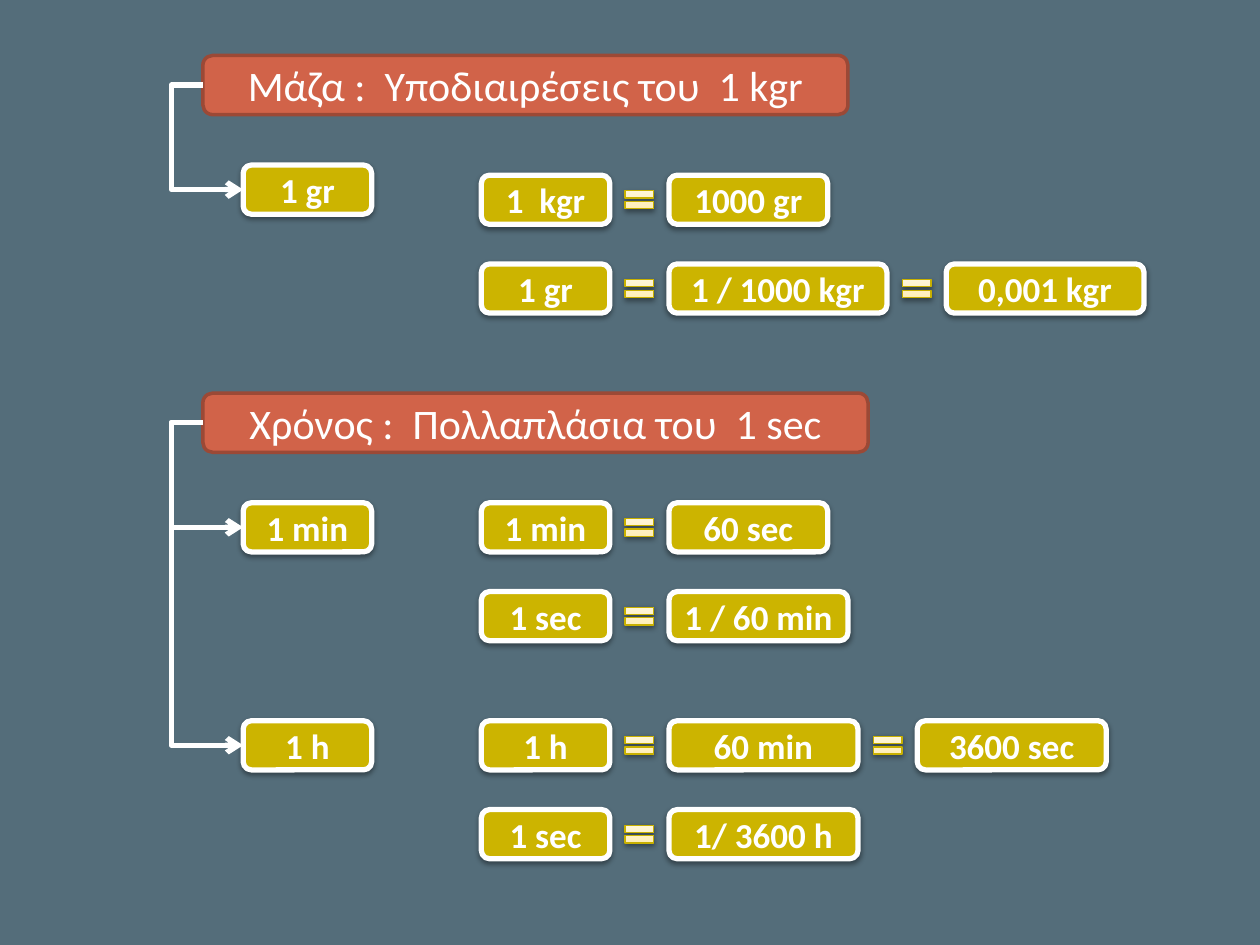
from dataclasses import dataclass

from lxml.etree import SubElement
from pptx import Presentation
from pptx.dml.color import RGBColor
from pptx.enum.shapes import MSO_CONNECTOR as Link, MSO_SHAPE as Shape
from pptx.enum.text import MSO_ANCHOR as Anchor, PP_ALIGN as Align
from pptx.oxml import parse_xml
from pptx.oxml.ns import nsdecls, qn
from pptx.util import Inches, Pt

SLATE = RGBColor(0x54, 0x6D, 0x7A)
BRICK = RGBColor(0xD1, 0x63, 0x49)
DARK_BRICK = RGBColor(0x9B, 0x49, 0x36)
MUSTARD = RGBColor(0xCC, 0xB4, 0x00)
DARK_MUSTARD = RGBColor(0xC8, 0xB0, 0x00)
WHITE = RGBColor(0xFF, 0xFF, 0xFF)
CREAM_STOPS = ((0, RGBColor(0xFF, 0xEB, 0xA5)),
               (35, RGBColor(0xFF, 0xF0, 0xBF)),
               (100, RGBColor(0xFF, 0xF9, 0xE7)))
FONT = "Calibri"

# Grid columns and row measures, in inches
HEADING_LEFT, UNIT_LEFT, EQUATION_LEFT = 1.61, 1.93, 3.82
TRUNK_LEFT = 1.36
HEADING_HEIGHT, TILE_HEIGHT, TILE_WIDTH = 0.47, 0.39, 1.02
SIGN_WIDTH, SIGN_HEIGHT, SIGN_GAP = 0.31, 0.24, 0.08
ROW_STEP = 0.705


@dataclass
class Term:
    text: str
    width: float = TILE_WIDTH


@dataclass
class Unit:
    name: str
    top: float
    equations_top: float
    equations: list[list[Term]]


@dataclass
class Section:
    heading: str
    top: float
    width: float
    units: list[Unit]


SECTIONS = [
    Section("Μάζα :  Υποδιαιρέσεις του  1 kgr", 0.44, 5.12, [
        Unit("1 gr", 1.31, 1.39, [
            [Term("1  kgr"), Term("1000 gr", 1.26)],
            [Term("1 gr"), Term("1 / 1000 kgr", 1.73), Term("0,001 kgr", 1.57)],
        ]),
    ]),
    Section("Χρόνος :  Πολλαπλάσια του  1 sec", 3.12, 5.28, [
        Unit("1 min", 3.99, 3.99, [
            [Term("1 min"), Term("60 sec", 1.26)],
            [Term("1 sec"), Term("1 / 60 min", 1.42)],
        ]),
        Unit("1 h", 5.72, 5.72, [
            [Term("1 h"), Term("60 min", 1.5), Term("3600 sec", 1.5)],
            [Term("1 sec"), Term("1/ 3600 h", 1.5)],
        ]),
    ]),
]


def add_soft_shadow(shape) -> None:
    shape._element.spPr.append(parse_xml(
        f'<a:effectLst {nsdecls("a")}><a:outerShdw blurRad="{Pt(3.1)}" dist="{Pt(1.6)}" '
        'dir="5400000" rotWithShape="0"><a:srgbClr val="000000"><a:alpha val="38000"/>'
        '</a:srgbClr></a:outerShdw></a:effectLst>'))


def add_box(page, text: str, left: float, top: float, width: float, height: float,
            fill: RGBColor, border: RGBColor, weight: float, size: int, bold: bool):
    box = page.shapes.add_shape(Shape.ROUNDED_RECTANGLE, *map(Inches, (left, top, width, height)))
    box.shadow.inherit = False
    box.fill.solid()
    box.fill.fore_color.rgb = fill
    box.line.color.rgb = border
    box.line.width = Pt(weight)
    frame = box.text_frame
    frame.word_wrap = False
    frame.vertical_anchor = Anchor.MIDDLE
    para = frame.paragraphs[0]
    para.text = text
    para.alignment = Align.CENTER
    para.font.name = FONT
    para.font.size = Pt(size)
    para.font.bold = bold
    para.font.color.rgb = WHITE
    return box


def add_tile(page, term: Term, left: float, top: float) -> None:
    box = add_box(page, term.text, left, top, term.width, TILE_HEIGHT, MUSTARD, WHITE, 3, 20, True)
    box._element.spPr.remove(box._element.spPr.find(qn("a:effectLst")))
    add_soft_shadow(box)


def add_equal_sign(page, left: float, row_top: float) -> None:
    top = row_top + (TILE_HEIGHT - SIGN_HEIGHT) / 2
    sign = page.shapes.add_shape(Shape.MATH_EQUAL,
                                 *map(Inches, (left, top, SIGN_WIDTH, SIGN_HEIGHT)))
    sign.line.color.rgb = DARK_MUSTARD
    sign.line.width = Pt(0.75)
    stops = "".join(f'<a:gs pos="{share * 1000}"><a:srgbClr val="{color}"/></a:gs>'
                    for share, color in CREAM_STOPS)
    sign._element.spPr.find(qn("a:prstGeom")).addnext(parse_xml(
        f'<a:gradFill {nsdecls("a")} rotWithShape="1"><a:gsLst>{stops}</a:gsLst>'
        '<a:lin ang="16200000" scaled="1"/></a:gradFill>'))
    add_soft_shadow(sign)


def add_equation(page, terms: list[Term], top: float) -> None:
    left = EQUATION_LEFT
    for index, term in enumerate(terms):
        if index:
            add_equal_sign(page, left + SIGN_GAP, top)
            left += SIGN_WIDTH + 2 * SIGN_GAP
        add_tile(page, term, left, top)
        left += term.width


def add_branch(page, start: float, end: float) -> None:
    """Elbow arrow from a heading, around the trunk line, to a unit tile."""
    arrow = page.shapes.add_connector(
        Link.ELBOW, *map(Inches, (HEADING_LEFT, start, UNIT_LEFT, end)))
    arrow.line.color.rgb = WHITE
    arrow.line.width = Pt(3)
    properties = arrow._element.spPr
    bend = round((TRUNK_LEFT - HEADING_LEFT) / (UNIT_LEFT - HEADING_LEFT) * 100000)
    geometry = properties.find(qn("a:prstGeom"))
    SubElement(geometry.find(qn("a:avLst")), qn("a:gd"), name="adj1", fmla=f"val {bend}")
    SubElement(properties.find(qn("a:ln")), qn("a:tailEnd"), type="arrow")
    SubElement(properties, qn("a:effectLst"))


def add_section(page, section: Section) -> None:
    add_box(page, section.heading, HEADING_LEFT, section.top, section.width, HEADING_HEIGHT,
            BRICK, DARK_BRICK, 2, 24, False)
    for unit in section.units:
        add_tile(page, Term(unit.name), UNIT_LEFT, unit.top)
        add_branch(page, section.top + HEADING_HEIGHT / 2, unit.top + TILE_HEIGHT / 2)
        for row, terms in enumerate(unit.equations):
            add_equation(page, terms, unit.equations_top + row * ROW_STEP)


def main() -> None:
    deck = Presentation()
    deck.slide_width, deck.slide_height = Inches(10), Inches(7.5)
    page = deck.slides.add_slide(deck.slide_layouts[6])
    page.background.fill.solid()
    page.background.fill.fore_color.rgb = SLATE
    for section in SECTIONS:
        add_section(page, section)
    deck.save("out.pptx")


if __name__ == "__main__":
    main()
